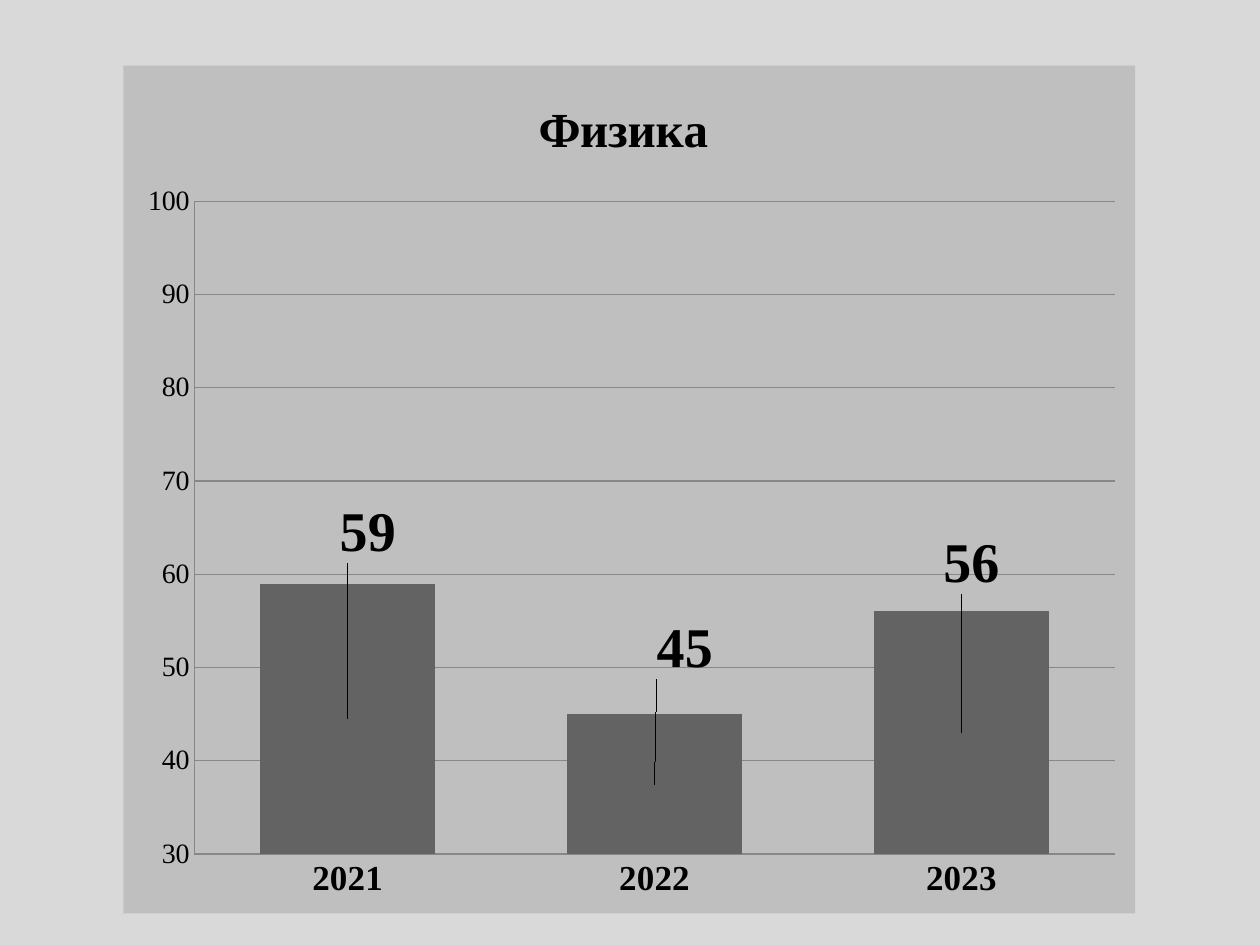
"""Build a slide with a column chart of yearly physics results."""
import pptx
import pptx.chart.data
import pptx.dml.color
import pptx.enum.chart
import pptx.oxml
import pptx.oxml.ns
import pptx.util

Inches = pptx.util.Inches
RGB = pptx.dml.color.RGBColor
BLACK = RGB(0x00, 0x00, 0x00)
BACK = RGB(0xD9, 0xD9, 0xD9)
PANEL = RGB(0xBF, 0xBF, 0xBF)
BAR = RGB(0x63, 0x63, 0x63)
GRID = RGB(0x87, 0x87, 0x87)
FACE = "Times New Roman"

TITLE = "Физика "
YEARS = ["2021", "2022", "2023"]
MARKS = [59, 45, 56]
SHIFTS = [(0.02, -0.22), (0.03, -0.16), (0.01, -0.2)]
PLOT = {"x": 0.07, "y": 0.16, "w": 0.91, "h": 0.77}


def style(font, size, bold=False):
    font.name = FACE
    font.size = pptx.util.Pt(size)
    font.bold = bold
    font.color.rgb = BLACK


def write(frame, text, **form):
    frame.text = text
    style(frame.paragraphs[0].runs[0].font, **form)


def layout(modes, sizes):
    parts = modes + "".join(f'<c:{k} val="{v}"/>' for k, v in sizes.items())
    return pptx.oxml.parse_xml(
        f'<c:layout {pptx.oxml.ns.nsdecls("c")}>'
        f'<c:manualLayout>{parts}</c:manualLayout></c:layout>')


def draw_axis(axis, size, bold=False):
    none = pptx.enum.chart.XL_TICK_MARK.NONE
    axis.major_tick_mark = axis.minor_tick_mark = none
    axis.format.line.color.rgb = GRID
    axis.format.line.width = pptx.util.Pt(0.75)
    style(axis.tick_labels.font, size, bold)


def draw_chart(slide):
    data = pptx.chart.data.CategoryChartData()
    data.categories = YEARS
    data.add_series("Series 1", MARKS)
    kind = pptx.enum.chart.XL_CHART_TYPE.COLUMN_STACKED
    chart = slide.shapes.add_chart(
        kind, Inches(0.98), Inches(0.52), Inches(8.03), Inches(6.73), data).chart
    style(chart.font, 10)
    chart.has_legend = False
    chart.has_title = True
    write(chart.chart_title.text_frame, TITLE, size=28, bold=True)
    chart.chart_title.include_in_layout = False

    draw_axis(chart.category_axis, 20, True)
    axis = chart.value_axis
    draw_axis(axis, 16)
    axis.minimum_scale, axis.maximum_scale, axis.major_unit = 30, 100, 10
    axis.has_major_gridlines = True
    axis.major_gridlines.format.line.color.rgb = GRID
    axis.major_gridlines.format.line.width = pptx.util.Pt(0.75)

    plot = chart.plots[0]
    plot.gap_width, plot.overlap = 75, 100
    plot.vary_by_categories = False
    bars = plot.series[0]
    bars.format.fill.solid()
    bars.format.fill.fore_color.rgb = BAR
    bars.data_labels.show_value = True
    style(bars.data_labels.font, 32, True)
    for i, (x, y) in enumerate(SHIFTS):
        style(bars.points[i].data_label.font, 32, True)
        label = bars.data_labels._element.findall(pptx.oxml.ns.qn("c:dLbl"))[i]
        label.insert(1, layout("", {"x": x, "y": y}))

    root = chart.element.find(pptx.oxml.ns.qn("c:chart"))
    area = root.find(pptx.oxml.ns.qn("c:plotArea"))
    for old in area.findall(pptx.oxml.ns.qn("c:layout")):
        area.remove(old)
    modes = ('<c:layoutTarget val="inner"/><c:xMode val="edge"/>'
             '<c:yMode val="edge"/>')
    area.insert(0, layout(modes, PLOT))
    root.addnext(pptx.oxml.parse_xml(
        f'<c:spPr {pptx.oxml.ns.nsdecls("c", "a")}><a:solidFill>'
        f'<a:srgbClr val="{PANEL}"/></a:solidFill>'
        '<a:ln><a:noFill/></a:ln></c:spPr>'))


def main():
    deck = pptx.Presentation()
    deck.slide_width, deck.slide_height = Inches(10), Inches(7.5)
    slide = deck.slides.add_slide(deck.slide_layouts[6])
    slide.background.fill.solid()
    slide.background.fill.fore_color.rgb = BACK
    draw_chart(slide)
    deck.save("out.pptx")


if __name__ == "__main__":
    main()
